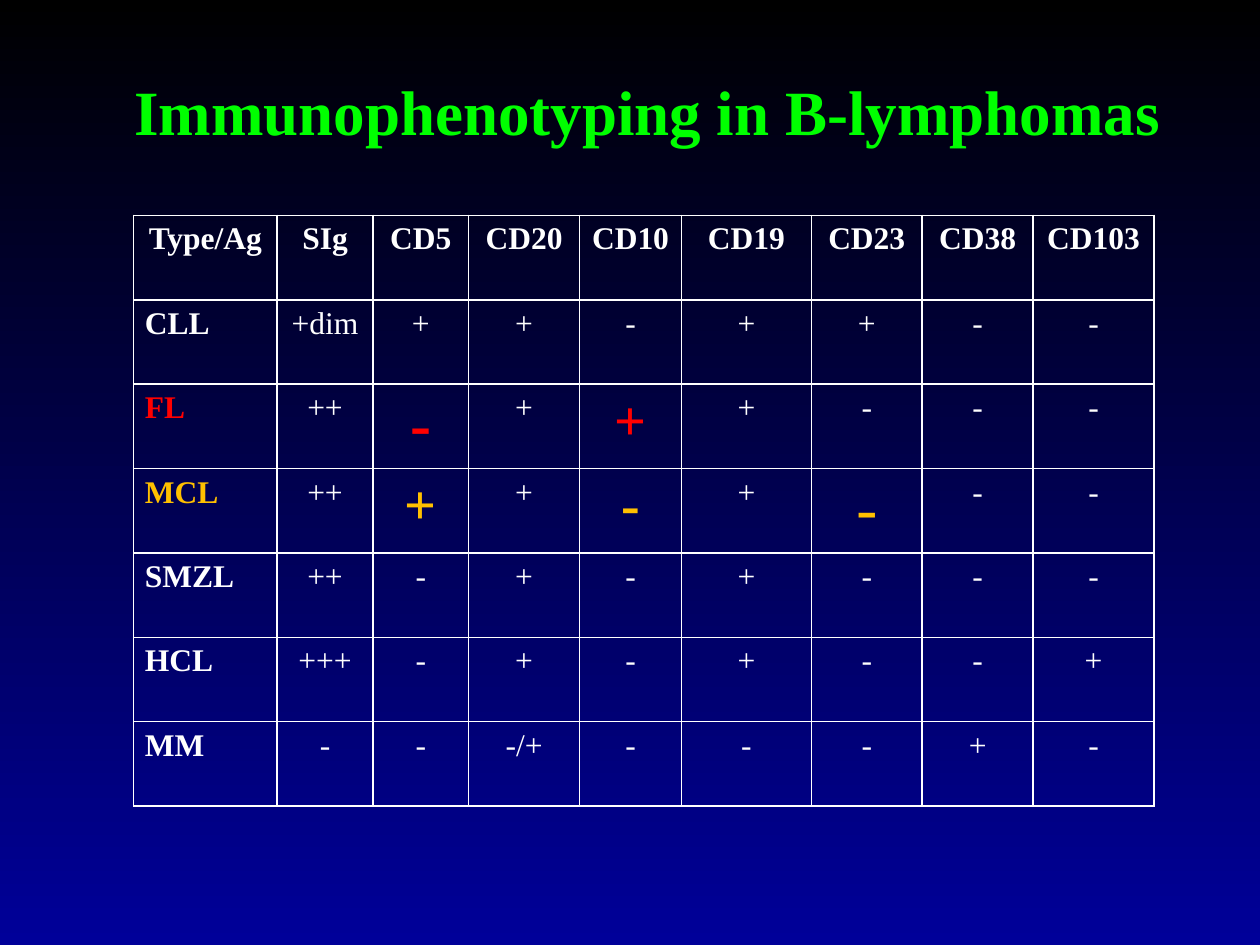
from dataclasses import dataclass, field

import pptx
import pptx.dml.color
import pptx.enum.text
import pptx.oxml
import pptx.oxml.ns
import pptx.table
import pptx.util
from pptx.dml.color import RGBColor

BLACK = RGBColor(0x00, 0x00, 0x00)
NAVY = RGBColor(0x00, 0x00, 0x99)
GREEN = RGBColor(0x00, 0xFF, 0x00)
WHITE = RGBColor(0xFF, 0xFF, 0xFF)
RED = RGBColor(0xFF, 0x00, 0x00)
AMBER = RGBColor(0xFF, 0xC0, 0x00)

FONT = "Times New Roman"
BODY_SIZE = 18
SLIDE_WIDTH = pptx.util.Inches(10)
SLIDE_HEIGHT = pptx.util.Inches(7.5)
CENTER = pptx.enum.text.PP_ALIGN.CENTER
LEFT = pptx.enum.text.PP_ALIGN.LEFT

# Column widths and the common row height, in inches
COLUMN_WIDTHS = (1.14, 0.76, 0.76, 0.88, 0.81, 1.03, 0.88, 0.88, 0.96)
ROW_HEIGHT = 0.67
TABLE_LEFT, TABLE_TOP = 1.06, 1.71


@dataclass
class Mark:
    """A result that stands out in its row."""
    size: int
    bold: bool = True


@dataclass
class Lymphoma:
    name: str
    results: str
    color: RGBColor = WHITE
    marks: dict[str, Mark] = field(default_factory=dict)


ANTIGENS = "SIg CD5 CD20 CD10 CD19 CD23 CD38 CD103".split()
LYMPHOMAS = (
    Lymphoma("CLL", "+dim + + - + + - -"),
    Lymphoma("FL", "++ - + + + - - -", RED,
             {"CD5": Mark(36), "CD10": Mark(32)}),
    Lymphoma("MCL", "++ + + - + - - -", AMBER,
             {"CD5": Mark(32), "CD10": Mark(32), "CD23": Mark(36, False)}),
    Lymphoma("SMZL", "++ - + - + - - -"),
    Lymphoma("HCL", "+++ - + - + - - +"),
    Lymphoma("MM", "- - -/+ - - - + -"),
)


def write(frame: pptx.text.text.TextFrame, text: str, size: int, color: RGBColor,
          bold: bool, align: pptx.enum.text.PP_ALIGN = CENTER) -> None:
    frame.text = text
    paragraph = frame.paragraphs[0]
    paragraph.alignment = align
    font = paragraph.runs[0].font
    font.name, font.size, font.bold = FONT, pptx.util.Pt(size), bold
    font.color.rgb = color


def outline(cell: pptx.table._Cell) -> None:
    """Clear the cell's fill and rule its four sides in white."""
    cell.fill.background()
    properties = cell._tc.get_or_add_tcPr()
    for index, side in enumerate(("lnL", "lnR", "lnT", "lnB")):
        properties.insert(index, pptx.oxml.parse_xml(
            f'<a:{side} {pptx.oxml.ns.nsdecls("a")} w="{pptx.util.Pt(1)}">'
            f'<a:solidFill><a:srgbClr val="{WHITE}"/></a:solidFill></a:{side}>'))


def fill_cell(cell: pptx.table._Cell, text: str, size: int = BODY_SIZE,
              color: RGBColor = WHITE, bold: bool = False,
              align: pptx.enum.text.PP_ALIGN = CENTER) -> None:
    cell.margin_left = cell.margin_right = pptx.util.Inches(0.09)
    cell.margin_top = cell.margin_bottom = pptx.util.Inches(0.05)
    outline(cell)
    write(cell.text_frame, text, size, color, bold, align)


def fill_lymphoma_row(table: pptx.table.Table, row: int, lymphoma: Lymphoma) -> None:
    fill_cell(table.cell(row, 0), lymphoma.name, color=lymphoma.color,
              bold=True, align=LEFT)
    results = zip(ANTIGENS, lymphoma.results.split())
    for column, (antigen, result) in enumerate(results, start=1):
        cell = table.cell(row, column)
        mark = lymphoma.marks.get(antigen)
        if mark:
            fill_cell(cell, result, mark.size, lymphoma.color, mark.bold)
        else:
            fill_cell(cell, result)


def main() -> None:
    presentation = pptx.Presentation()
    presentation.slide_width, presentation.slide_height = SLIDE_WIDTH, SLIDE_HEIGHT
    slide = presentation.slides.add_slide(presentation.slide_layouts[5])

    # Background: black at the top to navy at the bottom
    background = slide.background.fill
    background.gradient()
    background.gradient_angle = 270
    for stop, position, color in zip(background.gradient_stops, (0, 1), (BLACK, NAVY)):
        stop.position = position
        stop.color.rgb = color

    # Title
    title = slide.shapes.title
    title.left, title.top = pptx.util.Inches(0.27), pptx.util.Inches(0.25)
    title.width, title.height = SLIDE_WIDTH - title.left, SLIDE_HEIGHT // 6
    title.text_frame.vertical_anchor = pptx.enum.text.MSO_ANCHOR.MIDDLE
    write(title.text_frame, "Immunophenotyping in B-lymphomas", 36, GREEN, True)

    # Table grid
    row_count = len(LYMPHOMAS) + 1
    table = slide.shapes.add_table(
        row_count, len(COLUMN_WIDTHS),
        pptx.util.Inches(TABLE_LEFT), pptx.util.Inches(TABLE_TOP),
        pptx.util.Inches(sum(COLUMN_WIDTHS)),
        pptx.util.Inches(ROW_HEIGHT * row_count)).table
    for column, width in zip(table.columns, COLUMN_WIDTHS):
        column.width = pptx.util.Inches(width)

    # Antigen headings, then one row per lymphoma
    for column, heading in enumerate(["Type/Ag", *ANTIGENS]):
        fill_cell(table.cell(0, column), heading, bold=True)
    for row, lymphoma in enumerate(LYMPHOMAS, start=1):
        fill_lymphoma_row(table, row, lymphoma)

    presentation.save("out.pptx")


if __name__ == "__main__":
    main()
